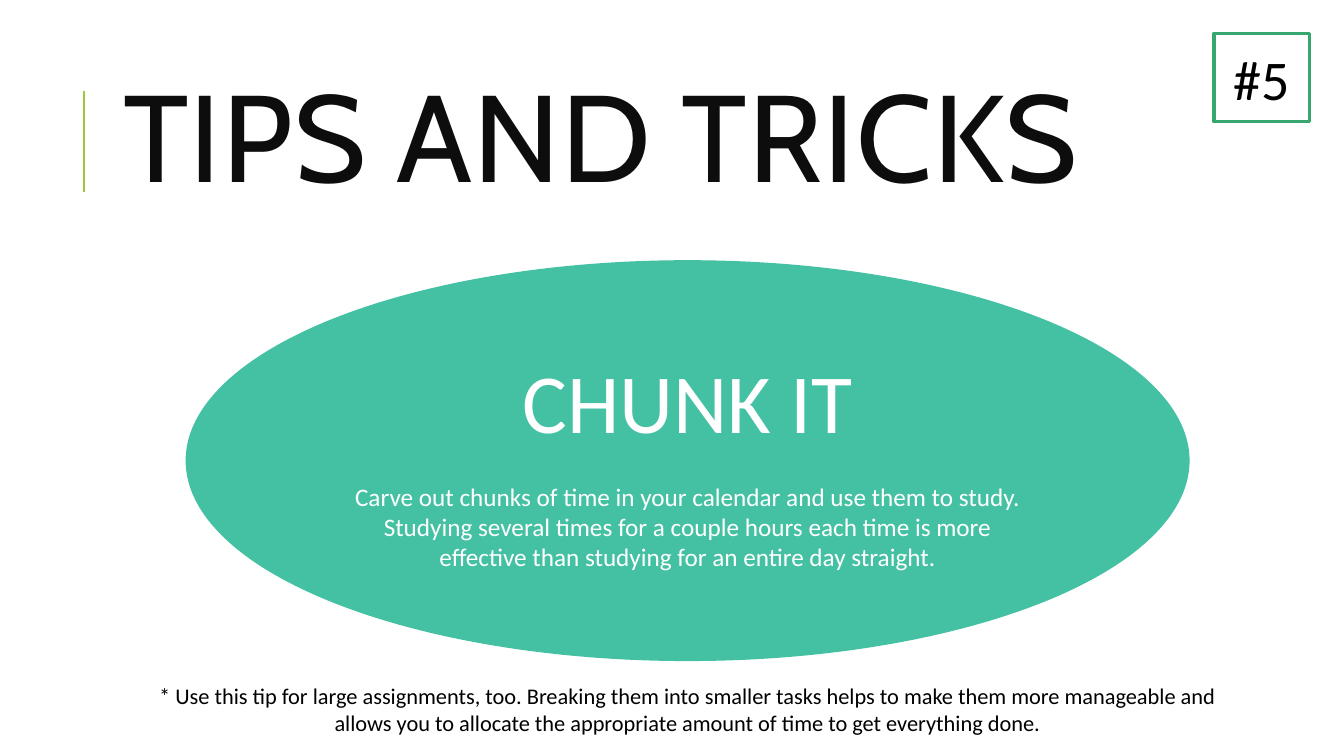
"""Build the "Tips and Tricks" slide about studying in chunks."""
from dataclasses import dataclass
from typing import Optional

from lxml.etree import SubElement
from pptx import Presentation
from pptx.dml.color import RGBColor
from pptx.enum.shapes import MSO_CONNECTOR, MSO_SHAPE
from pptx.enum.text import MSO_ANCHOR as Anchor, MSO_AUTO_SIZE as AutoSize, PP_ALIGN as Align
from pptx.oxml.ns import qn
from pptx.util import Pt

PX = 9144
COLOURS = {
    "title": "0D0D0D",
    "text": "000000",
    "light": "FFFFFF",
    "teal": "44C1A3",
    "green": "37A76F",
    "lime": "99CB38",
}


@dataclass(frozen=True)
class Line:
    text: str
    size: int
    colour: str
    font: str = "Calibri"
    align: Align = Align.CENTER
    space_before: int = 0
    line_spacing: float = 1.0
    tracking: int = 0


@dataclass(frozen=True)
class Panel:
    left: int
    top: int
    width: int
    height: int
    lines: tuple[Line, ...]
    shape: Optional[MSO_SHAPE] = None
    fill: Optional[str] = None
    outline: Optional[str] = None
    outline_width: float = 0
    anchor: Anchor = Anchor.MIDDLE


TITLE = Panel(112, 64, 1139, 164, (
    Line("TIPS AND TRICKS", 88, "title", "Cabin", Align.LEFT, line_spacing=0.8, tracking=100),
))
PANELS = (
    Panel(185, 259, 994, 396, (
        Line("CHUNK IT", 60, "light"),
        Line("Carve out chunks of time in your calendar and use them to study. "
             "Studying several times for a couple hours each time is more "
             "effective than studying for an entire day straight.",
             18, "light", space_before=22),
    ), MSO_SHAPE.OVAL, "teal", "teal", 1.25),
    Panel(1204, 33, 95, 88, (Line("#5", 40, "text"),),
          MSO_SHAPE.RECTANGLE, None, "green", 2.25),
    Panel(127, 672, 1110, 64, (
        Line("* Use this tip for large assignments, too. Breaking them into smaller "
             "tasks helps to make them more manageable and allows you to allocate "
             "the appropriate amount of time to get everything done.", 16, "text"),
    ), anchor=Anchor.TOP),
)


def rgb(name: str) -> RGBColor:
    """Return the named colour."""
    return RGBColor.from_string(COLOURS[name])


def write(box, panel: Panel) -> None:
    """Write the lines of a panel into a box."""
    frame = box.text_frame
    frame.word_wrap = True
    frame.auto_size = AutoSize.NONE
    frame.vertical_anchor = panel.anchor
    for index, line in enumerate(panel.lines):
        para = frame.add_paragraph() if index else frame.paragraphs[0]
        para.alignment = line.align
        para.space_before = Pt(line.space_before)
        para.line_spacing = line.line_spacing
        run = para.add_run()
        run.text = line.text
        run.font.name = line.font
        run.font.size = Pt(line.size)
        run.font.color.rgb = rgb(line.colour)
        if line.tracking:
            run.font._element.set("spc", str(line.tracking))


def place_title(page, panel: Panel) -> None:
    """Move and fill the title placeholder."""
    title = page.shapes.title
    title.left, title.top = panel.left * PX, panel.top * PX
    title.width, title.height = panel.width * PX, panel.height * PX
    write(title, panel)


def draw_panel(page, panel: Panel) -> None:
    """Draw a panel as a preset shape or a text box."""
    place = [side * PX for side in (panel.left, panel.top, panel.width, panel.height)]
    if panel.shape is None:
        box = page.shapes.add_textbox(*place)
    else:
        box = page.shapes.add_shape(panel.shape, *place)
        box.shadow.inherit = False
        if panel.fill:
            box.fill.solid()
            box.fill.fore_color.rgb = rgb(panel.fill)
        else:
            box.fill.background()
        box.line.color.rgb = rgb(panel.outline)
        box.line.width = Pt(panel.outline_width)
    write(box, panel)


def draw_title_rule(page) -> None:
    """Draw the upright rule left of the title."""
    rule = page.shapes.add_connector(MSO_CONNECTOR.STRAIGHT, 83 * PX, 190 * PX, 83 * PX, 90 * PX)
    rule.line.color.rgb = rgb("lime")
    rule.line.width = Pt(1.5)
    SubElement(rule._element.spPr, qn("a:effectLst"))


def main() -> None:
    """Build and save the deck."""
    deck = Presentation()
    deck.slide_width, deck.slide_height = 1333 * PX, 750 * PX
    page = deck.slides.add_slide(deck.slide_layouts[5])
    draw_title_rule(page)
    place_title(page, TITLE)
    for panel in PANELS:
        draw_panel(page, panel)
    deck.save("out.pptx")


if __name__ == "__main__":
    main()
